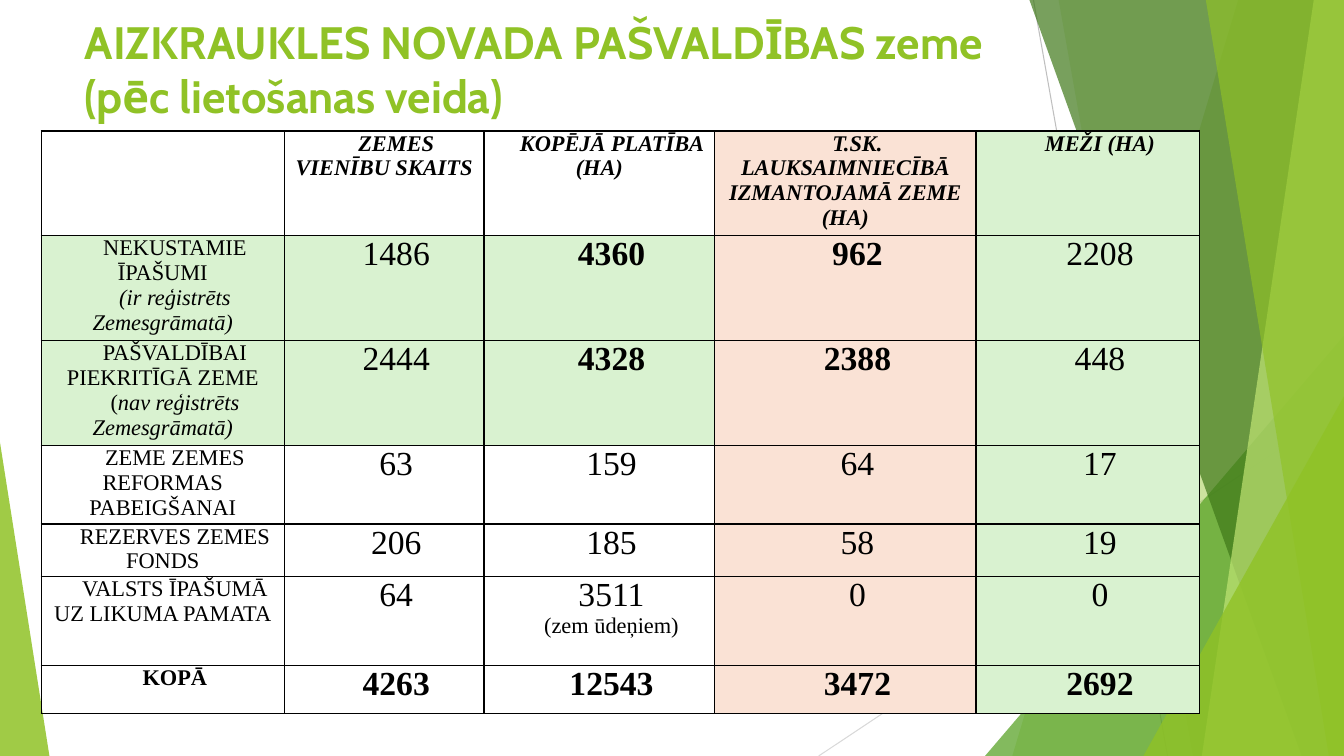
from lxml.etree import SubElement
from pptx import Presentation
from pptx.dml.color import RGBColor
from pptx.enum.shapes import MSO_CONNECTOR as CONN, MSO_SHAPE as SHAPE
from pptx.enum.text import MSO_ANCHOR as ANCHOR, MSO_AUTO_SIZE as AUTO, PP_ALIGN as ALIGN
from pptx.oxml.ns import qn
from pptx.util import Inches, Pt

COLORS = {"lime": "90C226", "green": "54A021", "dark": "3F7819", "pale": "C0E474",
          "mint": "D9F2D0", "peach": "FAE2D5", "black": "000000",
          "gray": "BFBFBF", "light": "D9D9D9"}

TITLE = "AIZKRAUKLES NOVADA PAŠVALDĪBAS zeme\v(pēc lietošanas veida)"
COL_WIDTHS = [2.41, 1.98, 2.29, 2.59, 2.22]
ROW_HEIGHTS = [1.04, 1.04, 1.04, 0.78, 0.52, 0.88, 0.48]
HEADERS = ["", "ZEMES VIENĪBU SKAITS", "KOPĒJĀ PLATĪBA (HA)",
           "T.SK. LAUKSAIMNIECĪBĀ IZMANTOJAMĀ ZEME (HA)", "MEŽI (HA)"]
LAND = [
    ("NEKUSTAMIE ĪPAŠUMI", [1486, 4360, 962, 2208]),
    ("PAŠVALDĪBAI PIEKRITĪGĀ ZEME", [2444, 4328, 2388, 448]),
    ("ZEME ZEMES REFORMAS PABEIGŠANAI", [63, 159, 64, 17]),
    ("REZERVES ZEMES FONDS", [206, 185, 58, 19]),
    ("VALSTS ĪPAŠUMĀ UZ LIKUMA PAMATA", [64, 3511, 0, 0]),
    ("KOPĀ", [4263, 12543, 3472, 2692]),
]
NOTES = {(1, 0): [("(ir reģistrēts Zemesgrāmatā)", True)],
         (2, 0): [("(", False), ("nav reģistrēts Zemesgrāmatā)", True)],
         (5, 2): [("(zem ūdeņiem)", False)]}
REGISTERED_ROWS = (1, 2)
TOTAL_ROW = len(LAND)


def rgb(name):
    """Return the named colour."""
    return RGBColor.from_string(COLORS[name])


def paint(sp, color, opacity):
    """Give a shape a translucent fill without line or shadow."""
    sp.shadow.inherit = False
    sp.fill.solid()
    sp.fill.fore_color.rgb = rgb(color)
    clr = sp.fill._xPr.find(qn("a:solidFill"))[0]
    SubElement(clr, qn("a:alpha"), val=str(opacity * 1000))
    sp.line.fill.background()


def add_facets(s, left, top, width, height):
    """Draw the faceted background in the box, behind everything else."""
    right, bottom = left + width, top + height
    grp = s.shapes.add_group_shape()
    for x1, y1, x2, y2, color in [(10.25, 0, 11.58, 7.5, "gray"),
                                  (13.33, 4.03, 8.12, 7.5, "light")]:
        line = grp.shapes.add_connector(CONN.STRAIGHT, Inches(left + x1), Inches(top + y1),
                                        Inches(left + x2), Inches(top + y2))
        line.line.color.rgb = rgb(color)
        line.line.width = Pt(0.75)
        SubElement(line._element.spPr, qn("a:effectLst"))

    def band(x_top, x_bottom, color, opacity):
        """Fill from a slanted edge to the right side."""
        pts = [(right, top), (right, bottom), (left + x_bottom, bottom)]
        fb = grp.shapes.build_freeform(Inches(left + x_top), Inches(top))
        fb.add_line_segments([(Inches(x), Inches(y)) for x, y in pts], close=True)
        paint(fb.convert_to_shape(), color, opacity)

    def corner(x, w, h, peak, color, opacity):
        """Stand a triangle on the bottom edge."""
        sp = grp.shapes.add_shape(SHAPE.ISOSCELES_TRIANGLE, Inches(left + x),
                                  Inches(bottom - h), Inches(w), Inches(h))
        sp.adjustments[0] = peak
        paint(sp, color, opacity)

    band(12.28, 10.04, "lime", 30)
    band(10.5, 11.83, "lime", 20)
    corner(9.77, 3.56, 4.17, 1, "green", 72)
    band(10.21, 12.91, "dark", 70)
    band(13.03, 11.92, "pale", 70)
    band(11.96, 13.18, "lime", 65)
    corner(11.34, 1.99, 3.57, 1, "lime", 80)
    corner(0, 0.49, 3.11, 0, "lime", 85)
    s.shapes._spTree.insert(2, grp._element)


def add_title(s, left, top, width, height):
    """Place and format the slide title."""
    sp = s.shapes.title
    sp.left, sp.top, sp.width, sp.height = map(Inches, (left, top, width, height))
    tf = sp.text_frame
    tf.text = TITLE
    tf.word_wrap = True
    tf.auto_size = AUTO.NONE
    tf.vertical_anchor = ANCHOR.TOP
    p = tf.paragraphs[0]
    p.alignment = ALIGN.LEFT
    font = p.font
    font.name, font.size, font.bold = "Cabin", Pt(32.4), True
    font.color.rgb = rgb("lime")


def write(p, runs, size, bold=False):
    """Write (text, italic) runs in a centred paragraph with a first-line indent."""
    p.alignment = ALIGN.CENTER
    pPr = p._p.get_or_add_pPr()
    pPr.set("marL", "0")
    pPr.set("indent", str(Inches(0.24)))
    font = p.font
    font.name, font.size, font.bold = "Times New Roman", Pt(size), bold
    font.color.rgb = rgb("black")
    for text, italic in runs:
        r = p.add_run()
        r.text = text
        r.font.italic = italic


def style_cell(cell, color):
    """Set a cell's margins, borders and fill."""
    cell.margin_left = cell.margin_right = Inches(0.07)
    cell.margin_top = cell.margin_bottom = 0
    tcPr = cell._tc.get_or_add_tcPr()
    for side in ("lnL", "lnR", "lnT", "lnB"):
        ln = SubElement(tcPr, qn(f"a:{side}"), w=str(Pt(1)))
        fill = SubElement(ln, qn("a:solidFill"))
        SubElement(fill, qn("a:srgbClr"), val=COLORS["black"])
    if color:
        cell.fill.solid()
        cell.fill.fore_color.rgb = rgb(color)
    else:
        cell.fill.background()


def cell_color(i, j):
    """Return the fill of row i, column j, or None."""
    if j == 3:
        return "peach"
    return "mint" if j == 4 or i in REGISTERED_ROWS else None


def add_land_table(s, left, top):
    """Build the land use table from its top left corner."""
    rows = [HEADERS] + [[name, *values] for name, values in LAND]
    tbl = s.shapes.add_table(len(rows), len(HEADERS), Inches(left), Inches(top),
                             Inches(sum(COL_WIDTHS)), Inches(sum(ROW_HEIGHTS))).table
    tbl.first_row = tbl.horz_banding = False
    for col, w in zip(tbl.columns, COL_WIDTHS):
        col.width = Inches(w)
    for row, h in zip(tbl.rows, ROW_HEIGHTS):
        row.height = Inches(h)
    for i, row in enumerate(rows):
        for j, value in enumerate(row):
            cell = tbl.cell(i, j)
            style_cell(cell, cell_color(i, j))
            tf = cell.text_frame
            if value != "":
                bold = i in (0, TOTAL_ROW) or (i in REGISTERED_ROWS and j in (2, 3))
                write(tf.paragraphs[0], [(str(value), i == 0)],
                      24 if i and j else 16, bold)
            if (i, j) in NOTES:
                write(tf.add_paragraph(), NOTES[i, j], 16)


def main():
    """Build and save the slide."""
    prs = Presentation()
    prs.slide_width, prs.slide_height = Inches(13.33), Inches(7.5)
    s = prs.slides.add_slide(prs.slide_layouts[5])
    add_facets(s, 0, 0, 13.33, 7.5)
    add_title(s, 0.74, 0.09, 9.4, 1.11)
    add_land_table(s, 0.41, 1.3)
    prs.save("out.pptx")


if __name__ == "__main__":
    main()
